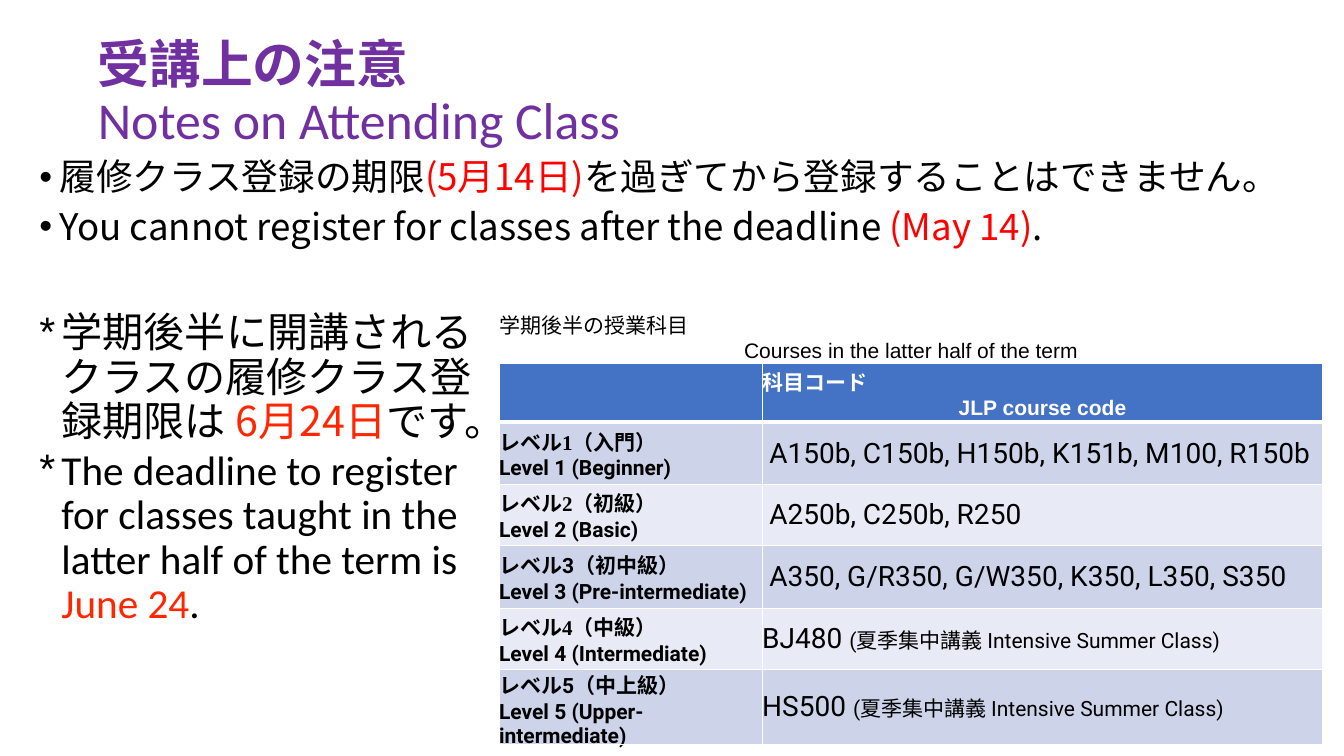
from lxml import etree
from pptx import Presentation
from pptx.dml.color import RGBColor as RGB
from pptx.enum.text import MSO_ANCHOR as Anchor, PP_ALIGN as Align
from pptx.oxml.ns import qn
from pptx.util import Inches, Pt

HUES = dict(purple="7030A0", black="000000", red="FF0000", orange="FF2600",
            white="FFFFFF", blue="4472C4", dark="CDD4EA", light="E8EBF5")
JP, CAL, ROB, ARIAL, TIMES = ("Noto Sans CJK JP", "Calibri", "Roboto",
                              "Arial", "Times New Roman")

# A paragraph is a list of runs; a run is its text and what differs from the default.
TITLE = [[("受講上の注意", dict(bold=True))],
         [("Notes on Attending Class", dict(font=CAL))]]
RULES = [
    [("履修クラス登録の期限", {}), ("(5月14日)", dict(hue="red")),
     ("を過ぎてから登録することはできません。", {})],
    [("You cannot register for classes after the deadline ", {}),
     ("(May 14)", dict(hue="red")), (".", {})],
]
LATER = [
    [("学期後半に開講されるクラスの履修クラス登録期限は ", {}),
     ("6月24日", dict(hue="orange")), ("です。", {})],
    [("The deadline to register for classes taught in the latter half of the term is",
      dict(font=CAL)),
     (" June 24", dict(font=CAL, hue="orange")), (".", dict(font=CAL))],
]
HEADS = [("学期後半の授業科目", "Courses in the latter half of the term"),
         ("科目コード", "JLP course code")]
SUMMER = "(夏季集中講義 Intensive Summer Class)"
# number, its font, Japanese name, English name, codes, remark
LEVELS = [
    ("1", TIMES, "入門", "Beginner", "A150b, C150b, H150b, K151b, M100, R150b", ""),
    ("2", TIMES, "初級", "Basic", "A250b, C250b, R250", ""),
    ("3", ROB, "初中級", "Pre-intermediate", "A350, G/R350, G/W350, K350, L350, S350", ""),
    ("4", TIMES, "中級", "Intermediate", "BJ480 ", SUMMER),
    ("5", ROB, "中上級", "Upper-intermediate", "HS500 ", SUMMER),
]
COLS = [2.61, 5.56]
ROWS = [0.56, 0.58, 0.62, 0.6, 0.63, 0.6, 0.63]


def write(frame, paras, aligns=(), gap=0, lines=None, bullet=None,
          left=0, hang=0, level=0, **base):
    """Fill a text frame with paragraphs of runs."""
    frame.word_wrap = True
    for i, runs in enumerate(paras):
        para = frame.paragraphs[0] if i == 0 else frame.add_paragraph()
        para.level = level
        para.space_before = Pt(gap)
        if lines:
            para.line_spacing = lines
        if aligns:
            para.alignment = aligns[i]
        if bullet:
            props = para._p.get_or_add_pPr()
            props.set("marL", str(Inches(left)))
            props.set("indent", str(-Inches(hang)))
            etree.SubElement(props, qn("a:buFont")).set("typeface", ARIAL)
            etree.SubElement(props, qn("a:buChar")).set("char", bullet)
        for text, diff in runs:
            look = dict(size=15, font=ROB, hue="black", bold=False) | base | diff
            run = para.add_run()
            run.text = text
            run.font.size = Pt(look["size"])
            run.font.bold = look["bold"]
            run.font.name = look["font"]
            run.font.color.rgb = RGB.from_string(HUES[look["hue"]])
            east = etree.SubElement(run._r.get_or_add_rPr(), qn("a:ea"))
            east.set("typeface", JP)


def add_box(slide, at, paras, anchor=Anchor.TOP, **look):
    frame = slide.shapes.add_textbox(*map(Inches, at)).text_frame
    frame.margin_left = frame.margin_right = Inches(0.05)
    frame.margin_top = frame.margin_bottom = Inches(0.05)
    frame.vertical_anchor = anchor
    write(frame, paras, lines=0.9, **look)


def style(cell, fill, side=0, top=1, base=1):
    """Set a cell's fill, margins and white borders."""
    cell.fill.solid()
    cell.fill.fore_color.rgb = RGB.from_string(HUES[fill])
    cell.vertical_anchor = Anchor.MIDDLE
    cell.margin_left = cell.margin_right = Inches(side)
    cell.margin_top = cell.margin_bottom = 0
    props = cell._tc.get_or_add_tcPr()
    for i, (edge, width) in enumerate(dict(L=1, R=1, T=top, B=base).items()):
        line = etree.Element(qn("a:ln" + edge), w=str(Pt(width)))
        paint = etree.SubElement(line, qn("a:solidFill"))
        etree.SubElement(paint, qn("a:srgbClr")).set("val", HUES["white"])
        props.insert(i, line)


def add_courses(slide):
    grid = slide.shapes.add_table(len(ROWS), len(COLS), Inches(4.95), Inches(3.05),
                                  Inches(sum(COLS)), Inches(sum(ROWS))).table
    for col, width in zip(grid.columns, COLS):
        col.width = Inches(width)
    for row, height in zip(grid.rows, ROWS):
        row.height = Inches(height)

    grid.cell(0, 0).merge(grid.cell(0, 1))
    for c in range(2):
        style(grid.cell(0, c), "white")
        style(grid.cell(1, c), "blue", base=3)
    spots = [(grid.cell(0, 0), "black", False), (grid.cell(1, 1), "white", True)]
    for (cell, hue, bold), head in zip(spots, HEADS):
        write(cell.text_frame, [[(text, {})] for text in head],
              aligns=(Align.LEFT, Align.CENTER), font=ARIAL, hue=hue, bold=bold)

    for i, (num, font, name, english, codes, note) in enumerate(LEVELS):
        label, list_ = grid.cell(i + 2, 0), grid.cell(i + 2, 1)
        fill = ("dark", "light")[i % 2]
        top = 3 if i == 0 else 1
        style(label, fill, top=top)
        style(list_, fill, side=0 if note else 0.07, top=top)
        write(label.text_frame,
              [[("レベル", {}), (num, dict(font=font)), (f"（{name}）", {})],
               [(f"Level {num} ({english})", {})]], bold=True)
        runs = [(codes, dict(size=20))] + ([(note, {})] if note else [])
        write(list_.text_frame, [runs])


def main():
    deck = Presentation()
    deck.slide_width, deck.slide_height = Inches(13.33), Inches(7.5)
    slide = deck.slides.add_slide(deck.slide_layouts[6])
    add_box(slide, (0.92, 0.21, 11.5, 1.45), TITLE, anchor=Anchor.MIDDLE,
            size=37, hue="purple")
    add_box(slide, (0.34, 1.53, 12.66, 1.45), RULES, size=26.2, font=JP,
            gap=7, bullet="•", left=0.2, hang=0.2)
    add_box(slide, (-0.1, 3.05, 4.91, 4.24), LATER, size=29.4, font=JP,
            gap=3, bullet="*", left=0.66, hang=0.22, level=1)
    add_courses(slide)
    deck.save("out.pptx")


if __name__ == "__main__":
    main()
